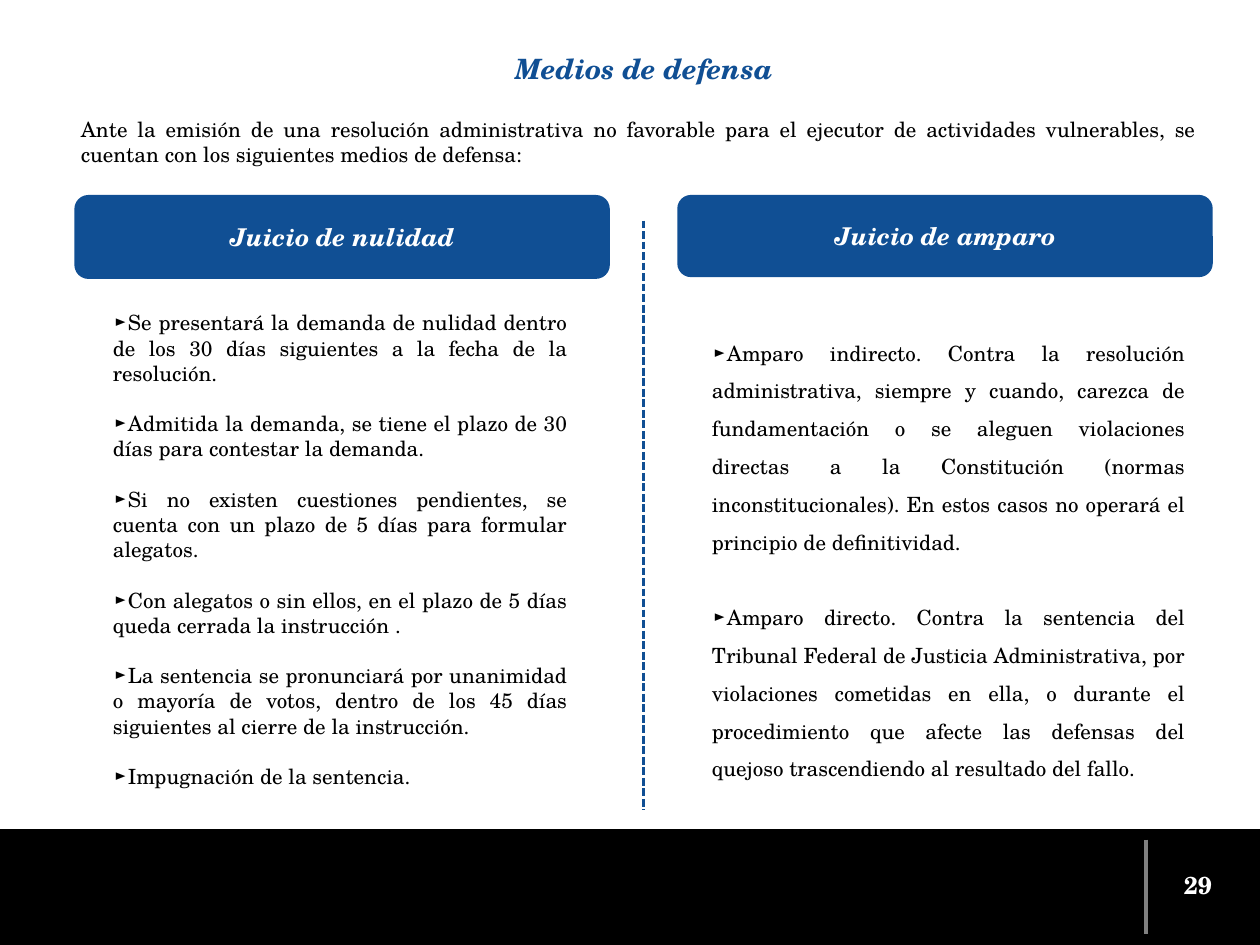
from lxml import etree
from pptx import Presentation
from pptx import util as u
from pptx.dml.color import RGBColor
from pptx.enum import dml, shapes, text
from pptx.oxml import ns

FONT = "TeX Gyre Schola"
BLUE, BLACK, WHITE, GRAY = "104F94", "000000", "FFFFFF", "808080"
CENTER, JUSTIFY = text.PP_ALIGN.CENTER, text.PP_ALIGN.JUSTIFY

TITLE = "Medios de defensa"
INTRO = ("Ante la emisión de una resolución administrativa no favorable para el ejecutor "
         "de actividades vulnerables, se cuentan con los siguientes medios de defensa:")
PAGE_NUMBER = "29"
COLUMNS = [
    {
        "heading": "Juicio de nulidad",
        "heading_at": (42.5, 111.4, 306, 48),
        "list_at": (57.3, 176.4, 274.3, 275),
        "spacing": 1.0,
        "items": [
            "Se presentará la demanda de nulidad dentro de los 30 días siguientes a la fecha de la resolución.",
            "Admitida la demanda, se tiene el plazo de 30 días para contestar la demanda.",
            "Si no existen cuestiones pendientes, se cuenta con un plazo de 5 días para formular alegatos.",
            "Con alegatos o sin ellos, en el plazo de 5 días queda cerrada la instrucción .",
            "La sentencia se pronunciará por unanimidad o mayoría de votos, dentro de los 45 días "
            "siguientes al cierre de la instrucción.",
            "Impugnación de la sentencia.",
        ],
    },
    {
        "heading": "Juicio de amparo",
        "heading_at": (387, 111.4, 306, 47),
        "list_at": (399.6, 185, 285, 263.5),
        "spacing": 1.5,
        "items": [
            "Amparo indirecto. Contra la resolución administrativa, siempre y cuando, carezca de "
            "fundamentación o se aleguen violaciones directas a la Constitución (normas "
            "inconstitucionales). En estos casos no operará el principio de definitividad.",
            "Amparo directo. Contra la sentencia del Tribunal Federal de Justicia Administrativa, por "
            "violaciones cometidas en ella, o durante el procedimiento que afecte las defensas del "
            "quejoso trascendiendo al resultado del fallo.",
        ],
    },
]


def color(value):
    return RGBColor.from_string(value)


def points(values):
    return [u.Pt(value) for value in values]


def place(box, at):
    box.left, box.top, box.width, box.height = points(at)


def write(box, lines, size, ink, align, bold=False, italic=False, spacing=1.0, gap=0, plain=False):
    frame = box.text_frame
    frame.word_wrap = True
    frame.auto_size = text.MSO_AUTO_SIZE.NONE
    frame.vertical_anchor = text.MSO_ANCHOR.MIDDLE
    for index, line in enumerate(lines):
        para = frame.paragraphs[0] if index == 0 else frame.add_paragraph()
        para.text = line
        para.alignment = align
        para.line_spacing = spacing
        para.space_before = u.Pt(gap if index else 0)
        para.space_after = u.Pt(0)
        if plain:
            properties = para._p.get_or_add_pPr()
            properties.set("marL", "0")
            properties.set("indent", "0")
            etree.SubElement(properties, ns.qn("a:buNone"))
        font = para.font
        font.name, font.size, font.bold, font.italic = FONT, u.Pt(size), bold, italic
        font.color.rgb = color(ink)
    return frame


def add_block(page, kind, at, fill):
    block = page.shapes.add_shape(kind, *points(at))
    block.shadow.inherit = False
    block.fill.solid()
    block.fill.fore_color.rgb = color(fill)
    block.line.fill.background()
    return block


def add_rule(page, x, top, bottom, ink, width):
    rule = page.shapes.add_connector(shapes.MSO_CONNECTOR.STRAIGHT, *points((x, top, x, bottom)))
    rule.line.color.rgb = color(ink)
    rule.line.width = u.Pt(width)
    etree.SubElement(rule._element.spPr, ns.qn("a:effectLst"))
    return rule


def main():
    deck = Presentation()
    deck.slide_width, deck.slide_height = u.Pt(720), u.Pt(540)
    page = deck.slides.add_slide(deck.slide_layouts[3])
    title, *bodies = page.placeholders

    add_block(page, shapes.MSO_SHAPE.RECTANGLE, (0, 473.8, 720, 66.2), BLACK)
    add_rule(page, 654.8, 479.8, 533.8, GRAY, 2)

    place(title, (42.5, 27, 650.9, 26))
    write(title, [TITLE], 16, BLUE, CENTER, bold=True, italic=True, spacing=0.9)

    number = page.shapes.add_textbox(*points((656, 491, 57, 29)))
    write(number, [PAGE_NUMBER], 14, WHITE, CENTER, bold=True)

    intro = page.shapes.add_textbox(*points((36.8, 61.4, 656.6, 38.9)))
    frame = write(intro, [INTRO], 12, BLACK, JUSTIFY)
    frame.vertical_anchor = text.MSO_ANCHOR.TOP
    frame.auto_size = text.MSO_AUTO_SIZE.SHAPE_TO_FIT_TEXT
    frame.margin_left = frame.margin_right = u.Pt(9.4)
    frame.margin_top = frame.margin_bottom = u.Pt(5)

    for column, body in zip(COLUMNS, bodies):
        heading = add_block(page, shapes.MSO_SHAPE.ROUNDED_RECTANGLE, column["heading_at"], BLUE)
        write(heading, [column["heading"]], 14, WHITE, CENTER, bold=True, italic=True)
        place(body, column["list_at"])
        body.fill.solid()
        body.fill.fore_color.rgb = color(WHITE)
        write(body, ["►" + item for item in column["items"]], 12, BLACK, JUSTIFY,
              spacing=column["spacing"], gap=14.4 * column["spacing"], plain=True)

    divider = add_rule(page, 367.7, 126, 462.7, BLUE, 1.5)
    divider.line.dash_style = dml.MSO_LINE.SQUARE_DOT

    deck.save("out.pptx")


if __name__ == "__main__":
    main()
